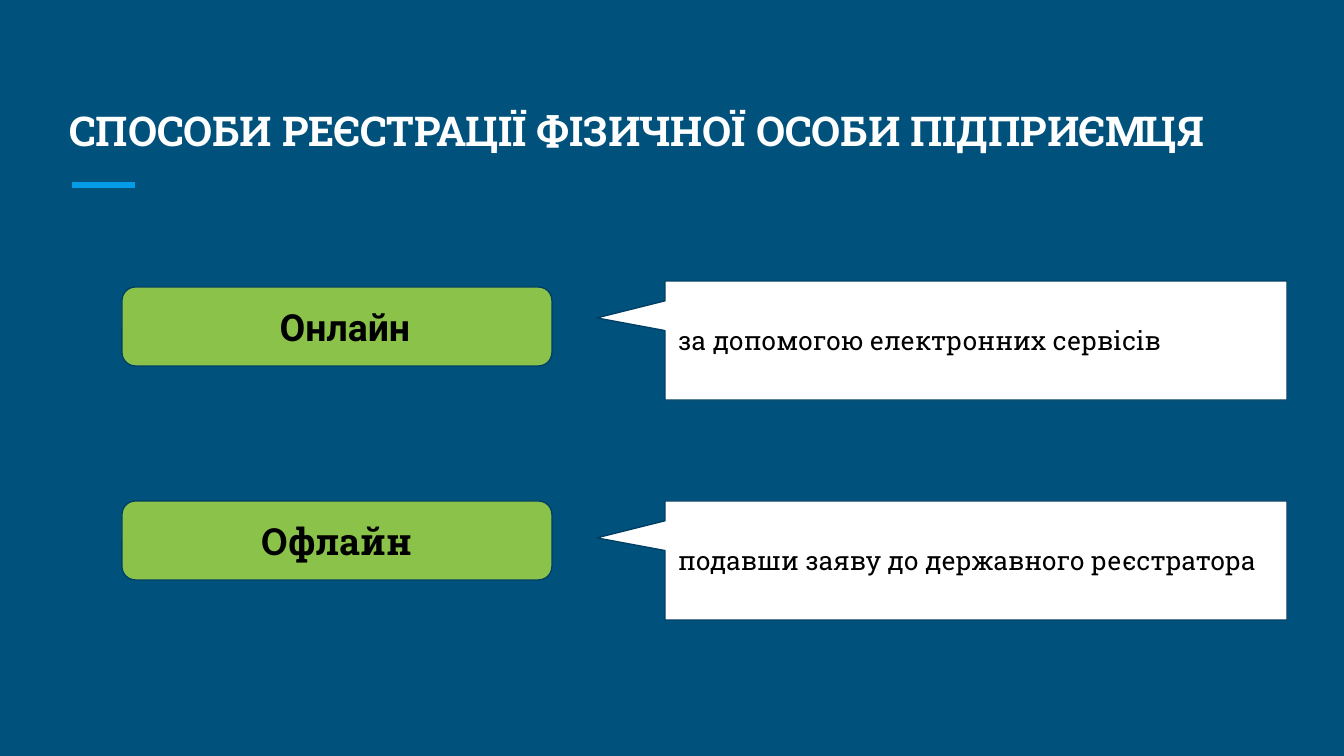
from pptx import Presentation
from pptx.dml.color import RGBColor
from pptx.enum.shapes import MSO_CONNECTOR, MSO_SHAPE
from pptx.enum.text import MSO_ANCHOR as ANCHOR, MSO_AUTO_SIZE, PP_ALIGN as ALIGN
from pptx.oxml.ns import qn
from pptx.util import Emu, Pt
from lxml import etree

PX = 914400 / 134.4
SLAB = "Roboto Slab"


def rgb(value):
    return RGBColor.from_string(value)


def write(sp, text, size, font=SLAB, color="000000", bold=True,
          align=ALIGN.CENTER, anchor=ANCHOR.MIDDLE):
    tf = sp.text_frame
    tf.word_wrap = True
    tf.auto_size = MSO_AUTO_SIZE.NONE
    tf.vertical_anchor = anchor
    tf.margin_left = tf.margin_right = tf.margin_top = tf.margin_bottom = Emu(91440)
    p = tf.paragraphs[0]
    p.alignment = align
    r = p.add_run()
    r.text = text
    r.font.name, r.font.size, r.font.bold = font, Pt(size), bold
    r.font.color.rgb = rgb(color)


prs = Presentation()
prs.slide_width, prs.slide_height = Emu(round(1344 * PX)), Emu(round(756 * PX))
s = prs.slides.add_slide(prs.slide_layouts[5])
s.background.fill.solid()
s.background.fill.fore_color.rgb = rgb("00517C")

# Title
title = s.shapes.title
title.left, title.top, title.width, title.height = [
    Emu(round(v * PX)) for v in (56, 67, 1230, 101)]
write(title, "СПОСОБИ РЕЄСТРАЦІЇ ФІЗИЧНОЇ ОСОБИ ПІДПРИЄМЦЯ", 22,
      color="FFFFFF", align=ALIGN.LEFT, anchor=ANCHOR.BOTTOM)

# Accent line under the title
accent = s.shapes.add_connector(
    MSO_CONNECTOR.STRAIGHT, *[Emu(round(v * PX)) for v in (72, 185, 135, 185)])
accent.line.color.rgb = rgb("039BE5")
accent.line.width = Pt(3)
etree.SubElement(accent._element.spPr, qn("a:effectLst"))

# Green labels and their white callouts
ROUND, CALLOUT = MSO_SHAPE.ROUNDED_RECTANGLE, MSO_SHAPE.ROUNDED_RECTANGULAR_CALLOUT
boxes = []
for label_top, callout_top in ((287, 281), (501, 501)):
    for kind, box, fill, adjustments in (
            (ROUND, (122, label_top, 430, 79), "8BC34A", (0.17,)),
            (CALLOUT, (665, callout_top, 622, 119), "FFFFFF", (-0.61, -0.19, 0))):
        sp = s.shapes.add_shape(kind, *[Emu(round(v * PX)) for v in box])
        for i, value in enumerate(adjustments):
            sp.adjustments[i] = value
        sp.shadow.inherit = False
        sp.fill.solid()
        sp.fill.fore_color.rgb = rgb(fill)
        sp.line.color.rgb = rgb("004065")
        sp.line.width = Pt(0.75)
        boxes.append(sp)
online, online_note, offline, offline_note = boxes

# Texts: the online label sits in its own box, slightly right of centre
online_text = s.shapes.add_textbox(*[Emu(round(v * PX)) for v in (147, 290, 396, 73)])
write(online_text, "Онлайн", 20, font="Roboto")
write(offline, "Офлайн", 20)
for sp, text in ((online_note, "за допомогою електронних сервісів"),
                 (offline_note, "подавши заяву до державного реєстратора")):
    write(sp, text, 14, bold=False, align=ALIGN.LEFT)

prs.save("out.pptx")
